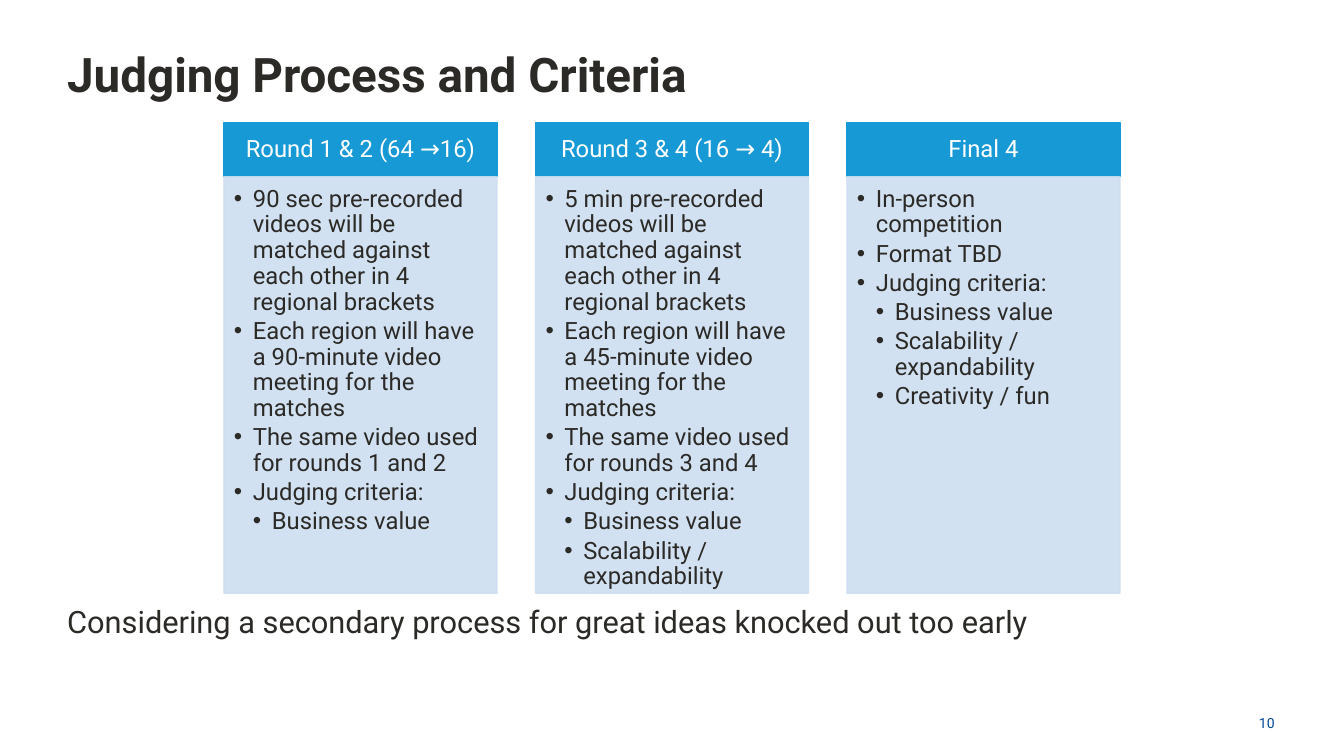
from lxml import etree
from pptx import Presentation
from pptx.dml.color import RGBColor
from pptx.enum.shapes import MSO_SHAPE
from pptx.enum.text import MSO_ANCHOR, MSO_AUTO_SIZE, PP_ALIGN
from pptx.oxml.ns import qn
from pptx.util import Pt

RECTANGLE = MSO_SHAPE.RECTANGLE
TOP, MIDDLE = MSO_ANCHOR.TOP, MSO_ANCHOR.MIDDLE
LEFT, CENTER, RIGHT = PP_ALIGN.LEFT, PP_ALIGN.CENTER, PP_ALIGN.RIGHT
NO_AUTOFIT = MSO_AUTO_SIZE.NONE

FONT = "Roboto"
COLORS = {
    "text": "2C2A26",
    "header": "1799D6",
    "panel": "CCDEF0",
    "white": "FFFFFF",
    "number": "004998",
}

# Column grid, in points
COLUMN_LEFT, COLUMN_WIDTH, COLUMN_STEP = 160, 195, 222.5
HEADER_TOP, HEADER_HEIGHT = 87.6, 38.6
PANEL_HEIGHT = 297.5
BULLET_INDENT = 13.5

PLACEHOLDER_INSETS = (0, 3.6, 7.2, 3.6)
HEADER_INSETS = (9.5, 5.4, 9.5, 5.4)
PANEL_INSETS = (7.14, 7.14, 9.5, 10.7)

# Each round: heading, then (level, text) for its bullets
ROUNDS = [
    ("Round 1 & 2 (64 →16)", [
        (0, "90 sec pre-recorded videos will be matched against each other in 4 regional brackets"),
        (0, "Each region will have a 90-minute video meeting for the matches"),
        (0, "The same video used for rounds 1 and 2"),
        (0, "Judging criteria:"),
        (1, "Business value"),
    ]),
    ("Round 3 & 4 (16 → 4)", [
        (0, "5 min pre-recorded videos will be matched against each other in 4 regional brackets"),
        (0, "Each region will have a 45-minute video meeting for the matches"),
        (0, "The same video used for rounds 3 and 4"),
        (0, "Judging criteria:"),
        (1, "Business value"),
        (1, "Scalability / expandability"),
    ]),
    ("Final 4", [
        (0, "In-person competition"),
        (0, "Format TBD"),
        (0, "Judging criteria:"),
        (1, "Business value"),
        (1, "Scalability / expandability"),
        (1, "Creativity / fun"),
    ]),
]


def color(name):
    return RGBColor.from_string(COLORS[name])


def set_attributes(target, values):
    for name, value in values.items():
        setattr(target, name, value)


def place(shape, left, top, width, height):
    set_attributes(shape, {"left": Pt(left), "top": Pt(top),
                           "width": Pt(width), "height": Pt(height)})


def format_frame(frame, insets, anchor):
    left, top, right, bottom = insets
    set_attributes(frame, {
        "word_wrap": True, "auto_size": NO_AUTOFIT, "vertical_anchor": anchor,
        "margin_left": Pt(left), "margin_top": Pt(top),
        "margin_right": Pt(right), "margin_bottom": Pt(bottom),
    })


def write(paragraph, text, size, color_name="text", bold=False, **layout):
    paragraph.text = text
    set_attributes(paragraph, {"space_before": Pt(0), **layout})
    set_attributes(paragraph.font, {"name": FONT, "size": Pt(size), "bold": bold})
    paragraph.font.color.rgb = color(color_name)


def set_bullet(paragraph, indent, hanging, character=None):
    properties = paragraph._p.get_or_add_pPr()
    properties.set("marL", str(int(Pt(indent))))
    properties.set("indent", str(int(Pt(-hanging))))
    if character:
        etree.SubElement(properties, qn("a:buFont")).set("typeface", "Arial")
        etree.SubElement(properties, qn("a:buChar")).set("char", character)
    else:
        etree.SubElement(properties, qn("a:buNone"))


def add_rectangle(slide, left, top, height, color_name, insets, anchor, opacity=100):
    shape = slide.shapes.add_shape(RECTANGLE, Pt(left), Pt(top),
                                   Pt(COLUMN_WIDTH), Pt(height))
    shape.shadow.inherit = False
    shape.fill.solid()
    shape.fill.fore_color.rgb = color(color_name)
    shape.line.color.rgb = color(color_name)
    shape.line.width = Pt(1)
    if opacity < 100:
        for element in shape._element.spPr.iter(qn("a:srgbClr")):
            etree.SubElement(element, qn("a:alpha")).set("val", str(opacity * 1000))
    format_frame(shape.text_frame, insets, anchor)
    return shape.text_frame


def add_round(slide, left, heading, bullets):
    header = add_rectangle(slide, left, HEADER_TOP, HEADER_HEIGHT, "header",
                           HEADER_INSETS, MIDDLE)
    write(header.paragraphs[0], heading, 17, "white", alignment=CENTER, line_spacing=0.9)

    panel = add_rectangle(slide, left, HEADER_TOP + HEADER_HEIGHT, PANEL_HEIGHT,
                          "panel", PANEL_INSETS, TOP, opacity=90)
    for index, (level, text) in enumerate(bullets):
        paragraph = panel.add_paragraph() if index else panel.paragraphs[0]
        set_bullet(paragraph, BULLET_INDENT * (level + 1), BULLET_INDENT, "•")
        write(paragraph, text, 17, level=level, alignment=LEFT,
              line_spacing=0.9, space_after=Pt(2.5))


def main():
    presentation = Presentation()
    presentation.slide_width, presentation.slide_height = Pt(960), Pt(540)
    slide = presentation.slides.add_slide(presentation.slide_layouts[1])

    # Title
    title = slide.shapes.title
    place(title, 48, 28.8, 863, 47)
    format_frame(title.text_frame, PLACEHOLDER_INSETS, MIDDLE)
    write(title.text_frame.paragraphs[0], "Judging Process and Criteria", 34,
          bold=True, alignment=LEFT)

    # Closing remark
    remark = slide.placeholders[1]
    place(remark, 48, 427, 863, 54)
    format_frame(remark.text_frame, PLACEHOLDER_INSETS, TOP)
    paragraph = remark.text_frame.paragraphs[0]
    set_bullet(paragraph, 0, 0)
    write(paragraph, "Considering a secondary process for great ideas knocked out too early",
          22, alignment=LEFT)

    # Rounds
    for index, (heading, bullets) in enumerate(ROUNDS):
        add_round(slide, COLUMN_LEFT + index * COLUMN_STEP, heading, bullets)

    # Slide number
    number = slide.shapes.add_textbox(Pt(880.5), Pt(502), Pt(30), Pt(29))
    format_frame(number.text_frame, (0, 0, 0, 0), MIDDLE)
    write(number.text_frame.paragraphs[0], "10", 10, "number", alignment=RIGHT)

    presentation.save("out.pptx")


if __name__ == "__main__":
    main()
